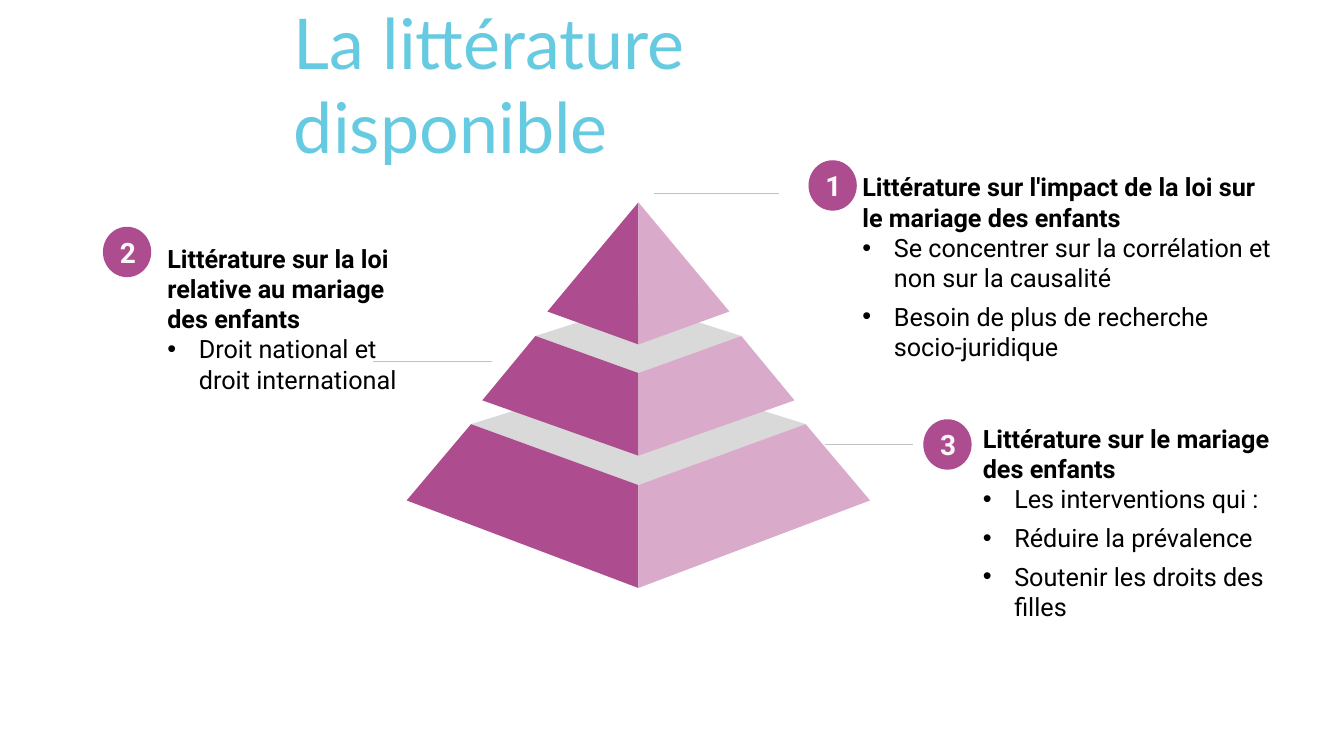
from dataclasses import dataclass

from lxml import etree
from pptx import Presentation
from pptx.dml.color import RGBColor
from pptx.enum import shapes, text
from pptx.oxml import ns
from pptx.util import Pt


@dataclass(frozen=True)
class Theme:
    title_font: str = "Lato"
    body_font: str = "Roboto"
    title_size: int = 50
    number_size: int = 20
    body_size: int = 18
    title: RGBColor = RGBColor(0x66, 0xCB, 0xE1)
    body: RGBColor = RGBColor(0, 0, 0)
    number: RGBColor = RGBColor(0xFA, 0xF9, 0xF5)
    dark: RGBColor = RGBColor(0xAE, 0x4C, 0x90)
    light: RGBColor = RGBColor(0xDA, 0xAA, 0xCB)
    ledge: RGBColor = RGBColor(0xD9, 0xD9, 0xD9)
    rule: RGBColor = RGBColor(0xC2, 0xC2, 0xC2)


THEME = Theme()

# Tiers from base to tip: half widths of the top and bottom edges, then heights
# of the back corner, side corner, front corner, lower side and lower front
TIERS = [
    (119.5, 165.5, 121, 158.5, 202, 213, 275.5),
    (73.5, 111.5, 72, 95.5, 122, 141.5, 181),
    (0, 65, 0, 0, 0, 78, 101.5),
]

# Number, list box, badge corner, rule (from x, to x, y), space after, heading, items
CALLOUTS = [
    ("1", (609, 103.5, 308, 174), (577.5, 114.5), (467.5, 556.5, 138), 6,
     "Littérature sur l'impact de la loi sur le mariage des enfants",
     ["Se concentrer sur la corrélation et non sur la causalité",
      "Besoin de plus de recherche socio-juridique"]),
    ("2", (112.5, 144, 191, 167), (73.5, 162), (351.5, 266.5, 258), 0,
     "Littérature sur la loi relative au mariage des enfants",
     ["Droit national et droit international"]),
    ("3", (695, 289.5, 247, 167), (659.5, 299.5), (589.5, 652.5, 317.5), 6,
     "Littérature sur le mariage des enfants",
     ["Les interventions qui :", "Réduire la prévalence",
      "Soutenir les droits des filles"]),
]


def style(p, font, size, color, bold=False):
    for r in p.runs:
        r.font.name, r.font.size, r.font.bold = font, Pt(size), bold
        r.font.color.rgb = color


def place(sp, box, inset_x, inset_y):
    sp.left, sp.top, sp.width, sp.height = map(Pt, box)
    tf = sp.text_frame
    tf.word_wrap = True
    tf.auto_size = text.MSO_AUTO_SIZE.NONE
    tf.vertical_anchor = text.MSO_ANCHOR.MIDDLE
    tf.margin_left = tf.margin_right = Pt(inset_x)
    tf.margin_top = tf.margin_bottom = Pt(inset_y)
    return tf


def set_bullet(p, bulleted):
    pPr = p._p.get_or_add_pPr()
    indent = Pt(22.5) if bulleted else 0
    pPr.set("marL", str(indent))
    pPr.set("indent", str(-indent))
    if bulleted:
        clr = etree.SubElement(pPr, ns.qn("a:buClr"))
        etree.SubElement(clr, ns.qn("a:srgbClr"), val=str(THEME.body))
        etree.SubElement(pPr, ns.qn("a:buChar"), char="•")
    else:
        etree.SubElement(pPr, ns.qn("a:buNone"))


def add_title(s, box):
    tf = place(s.shapes.title, box, 7, 3.5)
    tf.text = "La littérature disponible"
    p = tf.paragraphs[0]
    p.alignment = text.PP_ALIGN.LEFT
    style(p, THEME.title_font, THEME.title_size, THEME.title)


def add_face(s, points, color):
    start, *rest = [(Pt(x), Pt(y)) for x, y in points]
    builder = s.shapes.build_freeform(*start)
    builder.add_line_segments(rest, close=True)
    sp = builder.convert_to_shape()
    sp.shadow.inherit = False
    sp.fill.solid()
    sp.fill.fore_color.rgb = color
    sp.line.fill.background()


def add_pyramid(s, box):
    left, top, width, height = box
    mid = left + width / 2
    for half_top, half_low, *levels in TIERS:
        back, corner, front, low, foot = [top + y for y in levels]
        # Grey upper surface, absent at the tip
        if half_top:
            add_face(s, [(mid - half_top, corner), (mid, front),
                         (mid + half_top, corner), (mid, back)], THEME.ledge)
        # Mirrored front faces
        for side, color in ((-1, THEME.dark), (1, THEME.light)):
            add_face(s, [(mid + side * half_top, corner),
                         (mid + side * half_low, low),
                         (mid, foot), (mid, front)], color)


def add_rule(s, x1, x2, y):
    line = s.shapes.add_connector(shapes.MSO_CONNECTOR.STRAIGHT,
                                  Pt(x1), Pt(y), Pt(x2), Pt(y))
    line.line.color.rgb = THEME.rule
    line.line.width = Pt(0.75)
    etree.SubElement(line._element.spPr, ns.qn("a:effectLst"))


def add_badge(s, number, x, y):
    box = (x, y, 34.5, 36)
    sp = s.shapes.add_shape(shapes.MSO_SHAPE.OVAL, *map(Pt, box))
    sp.shadow.inherit = False
    sp.fill.solid()
    sp.fill.fore_color.rgb = THEME.dark
    sp.line.fill.background()
    tf = place(sp, box, 7, 3.5)
    tf.text = number
    p = tf.paragraphs[0]
    p.alignment = text.PP_ALIGN.CENTER
    style(p, THEME.body_font, THEME.number_size, THEME.number, True)


def add_callout(s, body, number, box, badge, rule, gap, heading, items):
    tf = place(body, box, 7, 7)
    tf.text = "\n".join([heading, *items])
    for i, p in enumerate(tf.paragraphs):
        p.alignment = text.PP_ALIGN.LEFT
        p.space_before = Pt(0)
        p.space_after = Pt(gap if i else 0)
        set_bullet(p, i > 0)
        style(p, THEME.body_font, THEME.body_size, THEME.body, i == 0)
    add_rule(s, *rule)
    add_badge(s, number, *badge)


def main():
    prs = Presentation()
    prs.slide_width, prs.slide_height = Pt(960), Pt(540)
    s = prs.slides.add_slide(prs.slide_layouts.get_by_name("Comparison"))
    bodies = list(s.placeholders)[1:]

    add_title(s, (203, 22.5, 520, 74))
    add_pyramid(s, (290.5, 144.5, 331, 275.5))
    for body, callout in zip(bodies, CALLOUTS):
        add_callout(s, body, *callout)

    # Unused body placeholders
    for body in bodies[len(CALLOUTS):]:
        body._element.getparent().remove(body._element)

    prs.save("out.pptx")


if __name__ == "__main__":
    main()
